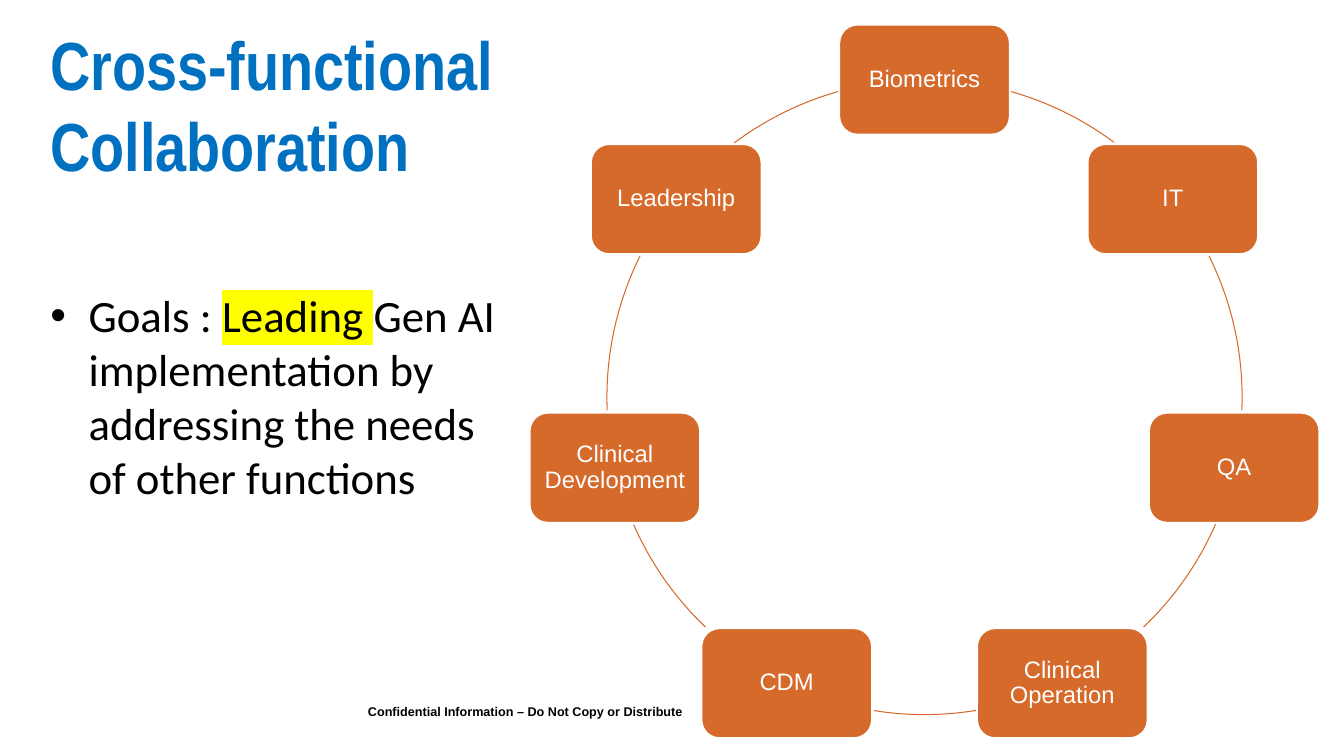
import math
from dataclasses import dataclass

import pptx
import pptx.dml.color
import pptx.enum.shapes
import pptx.enum.text
import pptx.oxml
import pptx.oxml.ns
import pptx.util
from pptx.util import Inches


@dataclass(frozen=True)
class Theme:
    title_color: str = "0070C0"
    text_color: str = "000000"
    highlight: str = "FFFF00"
    node_fill: str = "D56A2B"
    node_text: str = "FFFFFF"
    title_size: float = 48.6
    body_size: float = 32
    node_size: float = 17
    footer_size: float = 9


theme = Theme()


def style_font(font, name, size, color, bold=False):
    font.name = name
    font.size = pptx.util.Pt(size)
    font.bold = bold
    font.color.rgb = pptx.dml.color.RGBColor.from_string(color)


def add_text_box(left, top, width, height, anchor):
    box = slide.shapes.add_textbox(Inches(left), Inches(top), Inches(width), Inches(height))
    box.text_frame.word_wrap = True
    box.text_frame.vertical_anchor = anchor
    return box.text_frame


presentation = pptx.Presentation()
presentation.slide_width = Inches(13.33)
presentation.slide_height = Inches(7.5)
slide = presentation.slides.add_slide(presentation.slide_layouts[6])
anchors = pptx.enum.text.MSO_ANCHOR
shape_types = pptx.enum.shapes.MSO_SHAPE

footer = add_text_box(0.56, 6.93, 9.44, 0.25, anchors.MIDDLE)
footer.margin_left = Inches(3.09)
footer.text = "Confidential Information – Do Not Copy or Distribute"
style_font(footer.paragraphs[0].runs[0].font, "Arial", theme.footer_size, theme.text_color, True)

title = add_text_box(0.4, 0.17, 5.01, 1.42, anchors.TOP)
title.text = "Cross-functional Collaboration"
style_font(title.paragraphs[0].runs[0].font, "Arial Narrow", theme.title_size, theme.title_color, True)

goals = add_text_box(0.4, 2.26, 4.85, 3.33, anchors.MIDDLE).paragraphs[0]
properties = goals._p.get_or_add_pPr()
properties.set("marL", str(Inches(0.38)))
properties.set("indent", str(-Inches(0.38)))
namespace = pptx.oxml.ns.nsdecls("a")
properties.append(pptx.oxml.parse_xml(f'<a:buFont {namespace} typeface="Arial"/>'))
properties.append(pptx.oxml.parse_xml(f'<a:buChar {namespace} char="•"/>'))
for text, highlighted in [
    ("Goals : ", False),
    ("Leading ", True),
    ("Gen AI implementation by addressing the needs of other functions", False),
]:
    run = goals.add_run()
    run.text = text
    style_font(run.font, "Calibri", theme.body_size, theme.text_color)
    if highlighted:
        run.font._element.find(pptx.oxml.ns.qn("a:solidFill")).addnext(
            pptx.oxml.parse_xml(
                f'<a:highlight {namespace}><a:srgbClr val="{theme.highlight}"/></a:highlight>'
            )
        )

center_x, center_y, radius = 9.17, 3.94, 3.15
node_width, node_height = 1.7, 1.1
functions = [
    "Biometrics", "IT", "QA", "Clinical Operation",
    "CDM", "Clinical Development", "Leadership",
]
right_arcs = [(15.8, 36.8), (63.6, 92.4), (113.6, 136.4)]
left_arcs = [(360 - end, 360 - start) for start, end in reversed(right_arcs)]
arcs = right_arcs + [(170.7, 189.3)] + left_arcs

for index, (name, arc_angles) in enumerate(zip(functions, arcs)):
    angle = 2 * math.pi * index / len(functions)
    node = slide.shapes.add_shape(
        shape_types.ROUNDED_RECTANGLE,
        Inches(center_x + radius * math.sin(angle) - node_width / 2),
        Inches(center_y - radius * math.cos(angle) - node_height / 2),
        Inches(node_width),
        Inches(node_height),
    )
    node.shadow.inherit = False
    node.fill.solid()
    node.fill.fore_color.rgb = pptx.dml.color.RGBColor.from_string(theme.node_fill)
    node.line.color.rgb = pptx.dml.color.RGBColor.from_string(theme.node_text)
    node.line.width = pptx.util.Pt(2)
    frame = node.text_frame
    frame.word_wrap = True
    frame.vertical_anchor = anchors.MIDDLE
    frame.margin_left = frame.margin_right = Inches(0.05)
    frame.margin_top = frame.margin_bottom = Inches(0.05)
    frame.text = name
    paragraph = frame.paragraphs[0]
    paragraph.alignment = pptx.enum.text.PP_ALIGN.CENTER
    paragraph.line_spacing = 0.9
    style_font(paragraph.runs[0].font, "Arial", theme.node_size, theme.node_text)

    arc = slide.shapes.add_shape(
        shape_types.ARC,
        Inches(center_x - radius),
        Inches(center_y - radius),
        Inches(2 * radius),
        Inches(2 * radius),
    )
    arc.shadow.inherit = False
    arc.fill.background()
    arc.line.color.rgb = pptx.dml.color.RGBColor.from_string(theme.node_fill)
    arc.line.width = pptx.util.Pt(0.75)
    for position, degrees in enumerate(arc_angles):
        arc.adjustments[position] = (degrees - 90) % 360 * 0.6

presentation.save("out.pptx")
